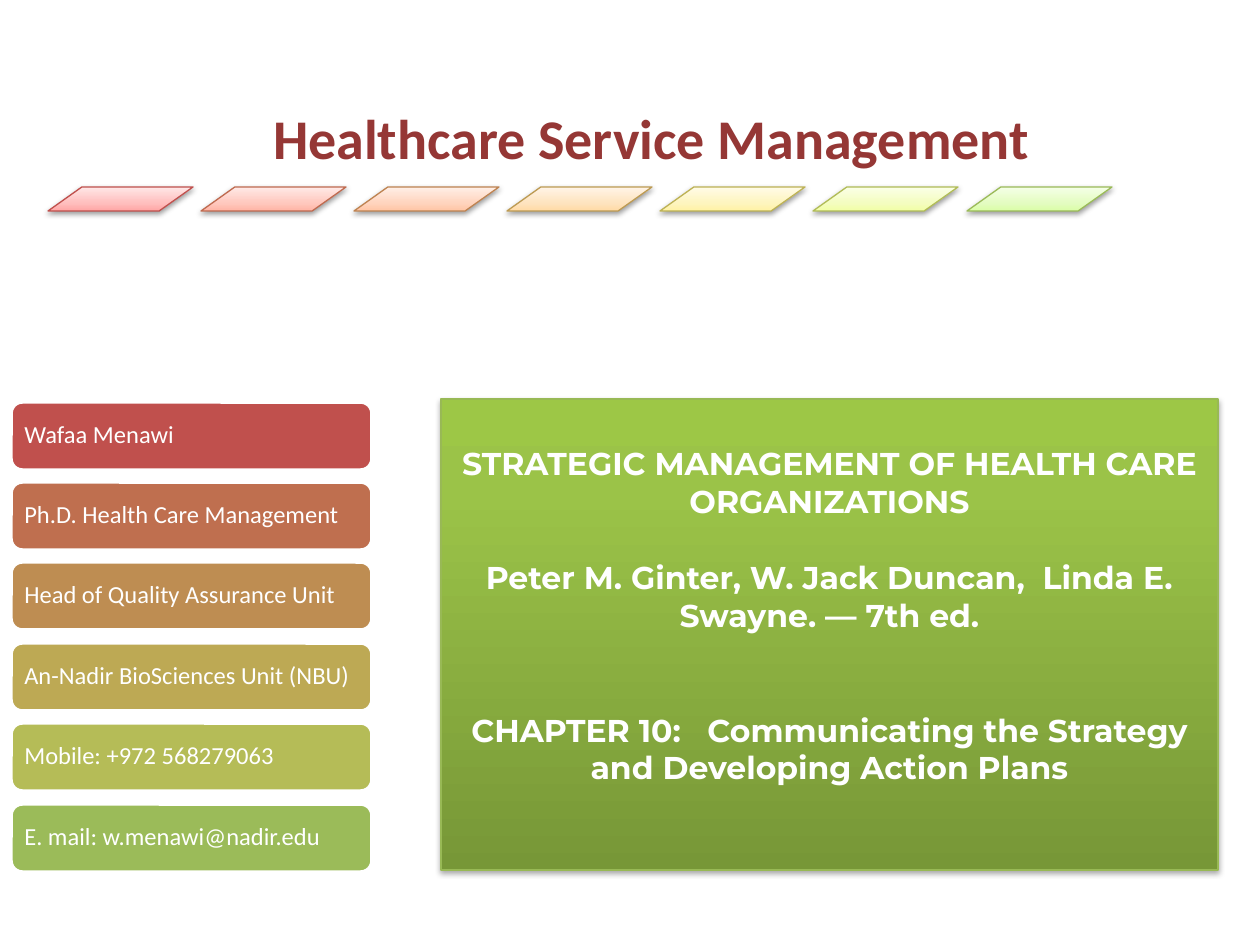
import copy

import pptx
import pptx.dml.color
import pptx.enum.shapes
import pptx.enum.text
import pptx.oxml
import pptx.oxml.ns
import pptx.util

RGBColor = pptx.dml.color.RGBColor
Pt = pptx.util.Pt
SHAPE = pptx.enum.shapes.MSO_SHAPE
ALIGN = pptx.enum.text.PP_ALIGN
ANCHOR = pptx.enum.text.MSO_ANCHOR
AUTO_SIZE = pptx.enum.text.MSO_AUTO_SIZE

EMU_PER_PX = 914400 / 126

WHITE = RGBColor(0xFF, 0xFF, 0xFF)
TITLE_RED = RGBColor(0x95, 0x37, 0x35)
PANEL_LINE = RGBColor(0x98, 0xB9, 0x55)
PANEL_STOPS = [
    (0, RGBColor(0x77, 0x97, 0x37)),
    (0.8, RGBColor(0x9B, 0xC3, 0x48)),
    (1, RGBColor(0x9D, 0xC7, 0x46)),
]
STRIPES = [
    [RGBColor.from_string(c) for c in row.split()]
    for row in (
        "C0504D FFA6A5 FFC0BF FFE7E7",
        "BF6A4F FFB4A5 FFC9BF FFEAE7",
        "BE8351 FFC5A5 FFD5BF FFEFE7",
        "BD9B53 FFDAA5 FEE4C0 FFF4E7",
        "BDB255 FFF2A5 FEF5C0 FFFBE7",
        "B1BC57 F1FEA6 F4FDC1 FBFFE7",
        "9BBB59 DAFDA7 E4FCC2 F5FFE7",
    )
]
CARDS = [
    ("Wafaa Menawi", RGBColor(0xC0, 0x50, 0x4D)),
    ("Ph.D. Health Care Management", RGBColor(0xBF, 0x6F, 0x4F)),
    ("Head of Quality Assurance Unit", RGBColor(0xBE, 0x8D, 0x52)),
    ("An-Nadir BioSciences Unit (NBU)", RGBColor(0xBD, 0xA9, 0x54)),
    ("Mobile: +972 568279063", RGBColor(0xB5, 0xBC, 0x57)),
    ("E. mail: w.menawi@nadir.edu", RGBColor(0x9B, 0xBB, 0x59)),
]
BOOK = [
    ("STRATEGIC MANAGEMENT OF HEALTH CARE ORGANIZATIONS", 0),
    ("Peter M. Ginter, W. Jack Duncan,  Linda E. Swayne. — 7th ed.", 22),
    ("CHAPTER 10:   Communicating the Strategy and Developing Action Plans", 44),
]


def px(n):
    return pptx.util.Emu(round(n * EMU_PER_PX))


def set_insets(tf, left, top, right, bottom):
    tf.margin_left, tf.margin_top = px(left), px(top)
    tf.margin_right, tf.margin_bottom = px(right), px(bottom)


def format_paragraph(p, font, size, color, align, bold=False):
    p.alignment = align
    for r in p.runs:
        r.font.name = font
        r.font.size = Pt(size)
        r.font.bold = bold
        r.font.color.rgb = color


def add_box(s, kind, left, top, width, height, line, line_width):
    sp = s.shapes.add_shape(kind, px(left), px(top), px(width), px(height))
    sp.shadow.inherit = False
    sp.line.color.rgb = line
    sp.line.width = Pt(line_width)
    return sp


def set_gradient(sp, stops):
    sp.fill.gradient()
    sp.fill.gradient_angle = 90
    gs_list = sp._element.spPr.find(".//" + pptx.oxml.ns.qn("a:gsLst"))
    gs_list.append(copy.deepcopy(gs_list[0]))
    for stop, (position, color) in zip(sp.fill.gradient_stops, stops):
        stop.position = position
        stop.color.rgb = color


def add_shadow(sp, opacity):
    effects = sp._element.spPr.find(pptx.oxml.ns.qn("a:effectLst"))
    effects.append(pptx.oxml.parse_xml(
        f'<a:outerShdw {pptx.oxml.ns.nsdecls("a")} blurRad="40000" dist="20000" '
        'dir="5400000" rotWithShape="0"><a:srgbClr val="000000">'
        f'<a:alpha val="{opacity * 1000}"/></a:srgbClr></a:outerShdw>'
    ))


def add_title(s):
    sp = s.shapes.title
    sp.left, sp.top, sp.width, sp.height = px(48), px(125), px(1207), px(63)
    tf = sp.text_frame
    tf.text = "Healthcare Service Management"
    tf.auto_size = AUTO_SIZE.NONE
    tf.word_wrap = True
    tf.vertical_anchor = ANCHOR.BOTTOM
    set_insets(tf, 16, 16, 16, 16)
    p = tf.paragraphs[0]
    p.line_spacing = 0.9
    format_paragraph(p, "Calibri", 32, TITLE_RED, ALIGN.CENTER, True)


def add_stripe(s, i, line, colors):
    left = 48 + 919 * i // 6
    sp = add_box(s, SHAPE.PARALLELOGRAM, left, 187, 145, 24, line, 0.75)
    sp.adjustments[0] = 1.41
    set_gradient(sp, zip((0, 0.35, 1), colors))
    add_shadow(sp, 38)


def add_card(s, i, text, color):
    top = 402 + 402 * i // 5
    sp = add_box(s, SHAPE.ROUNDED_RECTANGLE, 11, top, 361, 68, WHITE, 2)
    sp.fill.solid()
    sp.fill.fore_color.rgb = color
    tf = sp.text_frame
    tf.text = text
    tf.word_wrap = True
    tf.vertical_anchor = ANCHOR.MIDDLE
    set_insets(tf, 10, 8, 8, 8)
    p = tf.paragraphs[0]
    p.line_spacing = 0.9
    format_paragraph(p, "Calibri", 14, WHITE, ALIGN.LEFT)


def add_book_panel(s):
    sp = add_box(s, SHAPE.RECTANGLE, 441, 399, 777, 471, PANEL_LINE, 0.75)
    set_gradient(sp, PANEL_STOPS)
    add_shadow(sp, 35)
    tf = sp.text_frame
    tf.text = "\n".join(text for text, gap in BOOK)
    tf.word_wrap = True
    tf.vertical_anchor = ANCHOR.TOP
    set_insets(tf, 13, 45, 13, 6)
    for p, (text, gap) in zip(tf.paragraphs, BOOK):
        p.space_before = Pt(gap)
        format_paragraph(p, "Montserrat", 18, WHITE, ALIGN.CENTER, True)


def main():
    prs = pptx.Presentation()
    prs.slide_width, prs.slide_height = px(1260), px(945)
    s = prs.slides.add_slide(prs.slide_layouts[5])
    add_title(s)
    for i, (line, *colors) in enumerate(STRIPES):
        add_stripe(s, i, line, colors)
    for i, (text, color) in enumerate(CARDS):
        add_card(s, i, text, color)
    add_book_panel(s)
    prs.save("out.pptx")


if __name__ == "__main__":
    main()
